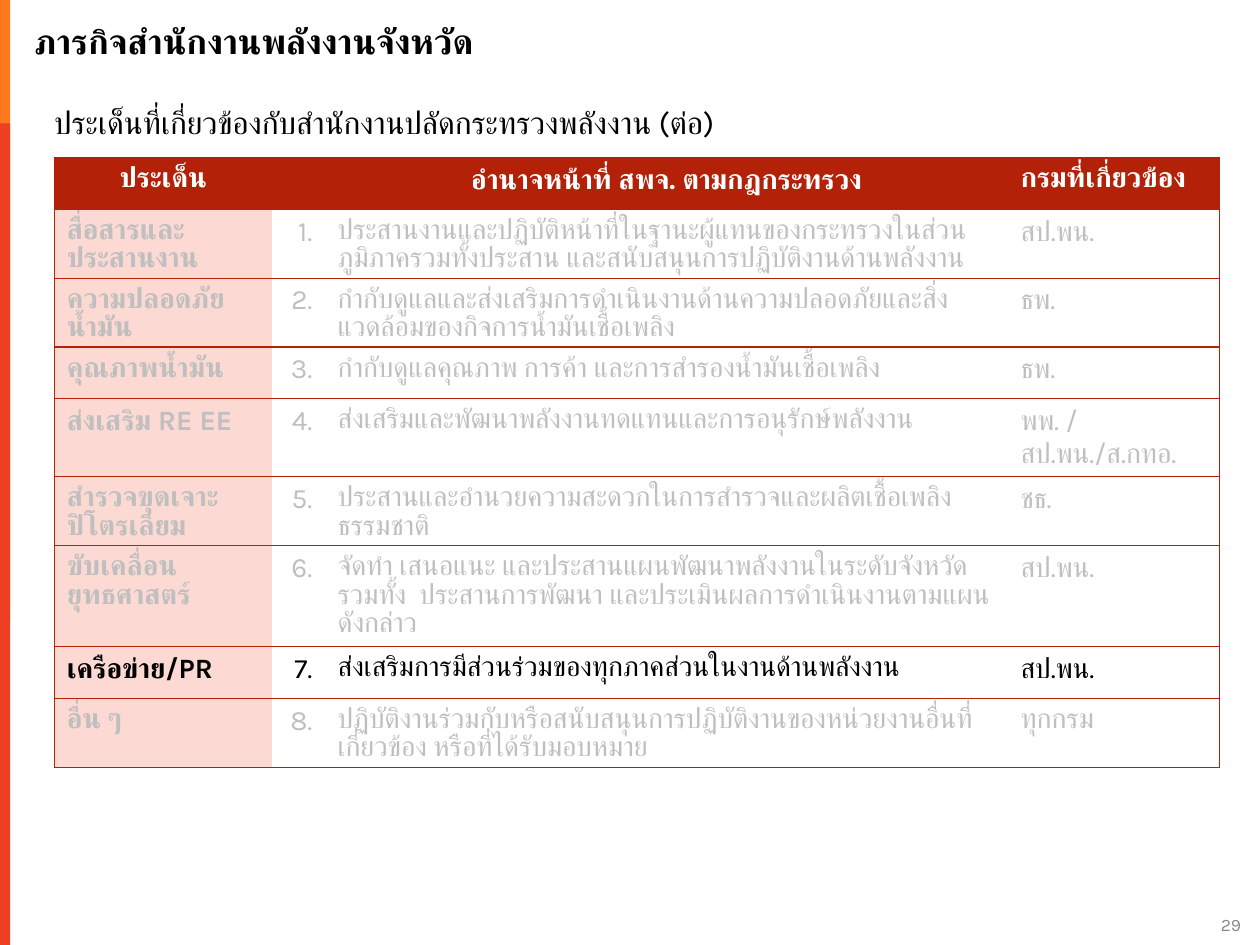
"""Builds the slide on provincial energy office missions."""
from lxml import etree
from pptx import Presentation, util as u
from pptx.dml.color import RGBColor
from pptx.enum import shapes, text
from pptx.oxml.ns import qn

BLACK = RGBColor(0x00, 0x00, 0x00)
WHITE = RGBColor(0xFF, 0xFF, 0xFF)
MUTED = RGBColor(0xBF, 0xBF, 0xBF)
GREY = RGBColor(0x89, 0x89, 0x89)
ORANGE = RGBColor(0xFF, 0x78, 0x1E)
RED = RGBColor(0xEE, 0x3F, 0x22)
BRICK = RGBColor(0xB3, 0x21, 0x09)
PINK = RGBColor(0xFC, 0xD9, 0xD3)
FONT = "Karla"
LEFT, CENTER, RIGHT = text.PP_ALIGN.LEFT, text.PP_ALIGN.CENTER, text.PP_ALIGN.RIGHT


def write(frame, words, size, color, bold=False, align=LEFT):
    frame.text = words
    para = frame.paragraphs[0]
    para.alignment = align
    for span in para.runs:
        look = {"name": FONT, "size": u.Pt(size), "bold": bold}
        for key, value in look.items():
            setattr(span.font, key, value)
        span.font.color.rgb = color
        etree.SubElement(span.font._element, qn("a:cs"), typeface=FONT)
    for line_break in para._p.findall(qn("a:br")):
        etree.SubElement(line_break, qn("a:rPr"), sz=str(size * 100))
    return para


def set_borders(cell, visible):
    properties = cell._tc.get_or_add_tcPr()
    for index, side in enumerate(("L", "R", "T", "B")):
        edge = etree.Element(qn(f"a:ln{side}"), w=str(u.Pt(0.75)))
        if side in visible:
            fill = etree.SubElement(edge, qn("a:solidFill"))
            etree.SubElement(fill, qn("a:srgbClr"), val=str(BRICK))
        else:
            etree.SubElement(edge, qn("a:noFill"))
        properties.insert(index, edge)


deck = Presentation()
deck.slide_width, deck.slide_height = u.Inches(10), u.Inches(7.5)
page = deck.slides.add_slide(deck.slide_layouts[5])

for top, height, color in ((0, 4.92, ORANGE), (0.98, 6.52, RED)):
    bar = page.shapes.add_shape(
        shapes.MSO_SHAPE.RECTANGLE, 0, u.Inches(top), u.Inches(0.08), u.Inches(height))
    bar.shadow.inherit = False
    bar.fill.solid()
    bar.fill.fore_color.rgb = color
    bar.line.fill.background()

title = page.shapes.title
subtitle = page.shapes.add_textbox(0, 0, 0, 0)
number = page.shapes.add_textbox(0, 0, 0, 0)
layout = (
    (title, (0.27, 0.04, 9.73, 0.56), text.MSO_ANCHOR.MIDDLE, True),
    (subtitle, (0.43, 0.75, 9.42, 0.61), text.MSO_ANCHOR.TOP, True),
    (number, (9.68, 7.27, 0.17, 0.15), text.MSO_ANCHOR.BOTTOM, False),
)
for box, place, anchor, wrap in layout:
    for key, value in zip(("left", "top", "width", "height"), place):
        setattr(box, key, u.Inches(value))
    frame_format = {
        "margin_left": 0, "margin_right": 0, "margin_top": 0, "margin_bottom": 0,
        "auto_size": text.MSO_AUTO_SIZE.NONE, "vertical_anchor": anchor, "word_wrap": wrap,
    }
    for key, value in frame_format.items():
        setattr(box.text_frame, key, value)

write(title.text_frame, "ภารกิจสำนักงานพลังงานจังหวัด", 20, BLACK, True)
para = write(subtitle.text_frame,
             "ประเด็นที่เกี่ยวข้องกับสำนักงานปลัดกระทรวงพลังงาน (ต่อ)", 18, BLACK)
para.line_spacing = 1.22
write(number.text_frame, "29", 10, GREY, align=RIGHT)

HEADER = ("ประเด็น", "", "อำนาจหน้าที่ สพจ. ตามกฎกระทรวง", "กรมที่เกี่ยวข้อง")
MISSIONS = (
    ("สื่อสารและประสานงาน",
     "ประสานงานและปฏิบัติหน้าที่ในฐานะผู้แทนของกระทรวงในส่วนภูมิภาครวมทั้งประสาน และสนับสนุนการปฏิบัติงานด้านพลังงาน",
     "สป.พน."),
    ("ความปลอดภัย\vน้ำมัน",
     "กํากับดูแลและส่งเสริมการดําเนินงานด้านความปลอดภัยและสิ่งแวดล้อมของกิจการน้ำมันเชื้อเพลิง",
     "ธพ."),
    ("คุณภาพน้ำมัน", "กํากับดูแลคุณภาพ การค้า และการสํารองน้ำมันเชื้อเพลิง", "ธพ."),
    ("ส่งเสริม RE EE", "ส่งเสริมและพัฒนาพลังงานทดแทนและการอนุรักษ์พลังงาน",
     "พพ. / สป.พน./ส.กทอ."),
    ("สำรวจขุดเจาะ\vปิโตรเลียม",
     "ประสานและอํานวยความสะดวกในการสํารวจและผลิตเชื้อเพลิงธรรมชาติ", "ชธ."),
    ("ขับเคลื่อนยุทธศาสตร์",
     "จัดทำ เสนอแนะ และประสานแผนพัฒนาพลังงานในระดับจังหวัด รวมทั้ง  ประสานการพัฒนา และประเมินผลการดําเนินงานตามแผนดังกล่าว",
     "สป.พน."),
    ("เครือข่าย/PR", "ส่งเสริมการมีส่วนร่วมของทุกภาคส่วนในงานด้านพลังงาน", "สป.พน."),
    ("อื่น ๆ",
     "ปฏิบัติงานร่วมกับหรือสนับสนุนการปฏิบัติงานของหน่วยงานอื่นที่เกี่ยวข้อง หรือที่ได้รับมอบหมาย",
     "ทุกกรม"),
)
COLUMN_WIDTHS = (1.73, 0.42, 5.42, 1.68)
ROW_HEIGHTS = (0.41, 0.54, 0.54, 0.41, 0.62, 0.54, 0.8, 0.41, 0.54)
HIGHLIGHTED = 7

rows = [HEADER] + [(topic, f"{index}.", duty, agency)
                   for index, (topic, duty, agency) in enumerate(MISSIONS, 1)]
table = page.shapes.add_table(
    len(rows), len(HEADER), u.Inches(0.43), u.Inches(1.25),
    u.Inches(sum(COLUMN_WIDTHS)), u.Inches(sum(ROW_HEIGHTS))).table
table.first_row = table.horz_banding = False
for column, width in zip(table.columns, COLUMN_WIDTHS):
    column.width = u.Inches(width)

for r, (row, height) in enumerate(zip(rows, ROW_HEIGHTS)):
    table.rows[r].height = u.Inches(height)
    for c, words in enumerate(row):
        cell = table.cell(r, c)
        if r == 0:
            color, align = WHITE, LEFT if c == 3 else CENTER
        else:
            color = BLACK if r == HIGHLIGHTED else MUTED
            align = RIGHT if c == 1 else LEFT
        para = write(cell.text_frame, words, 16, color, r == 0 or c == 0, align)
        only_thai = not any(letter.isascii() and not letter.isspace() for letter in words)
        if only_thai:
            para.line_spacing = 0.86
            cell.margin_top, cell.margin_bottom = u.Inches(0.06), u.Inches(0.04)
        if r == 0 or c == 0:
            cell.fill.solid()
            cell.fill.fore_color.rgb = BRICK if r == 0 else PINK
        else:
            cell.fill.background()
        set_borders(cell, "TB" + {0: "L", 3: "R"}.get(c, ""))

deck.save("out.pptx")
